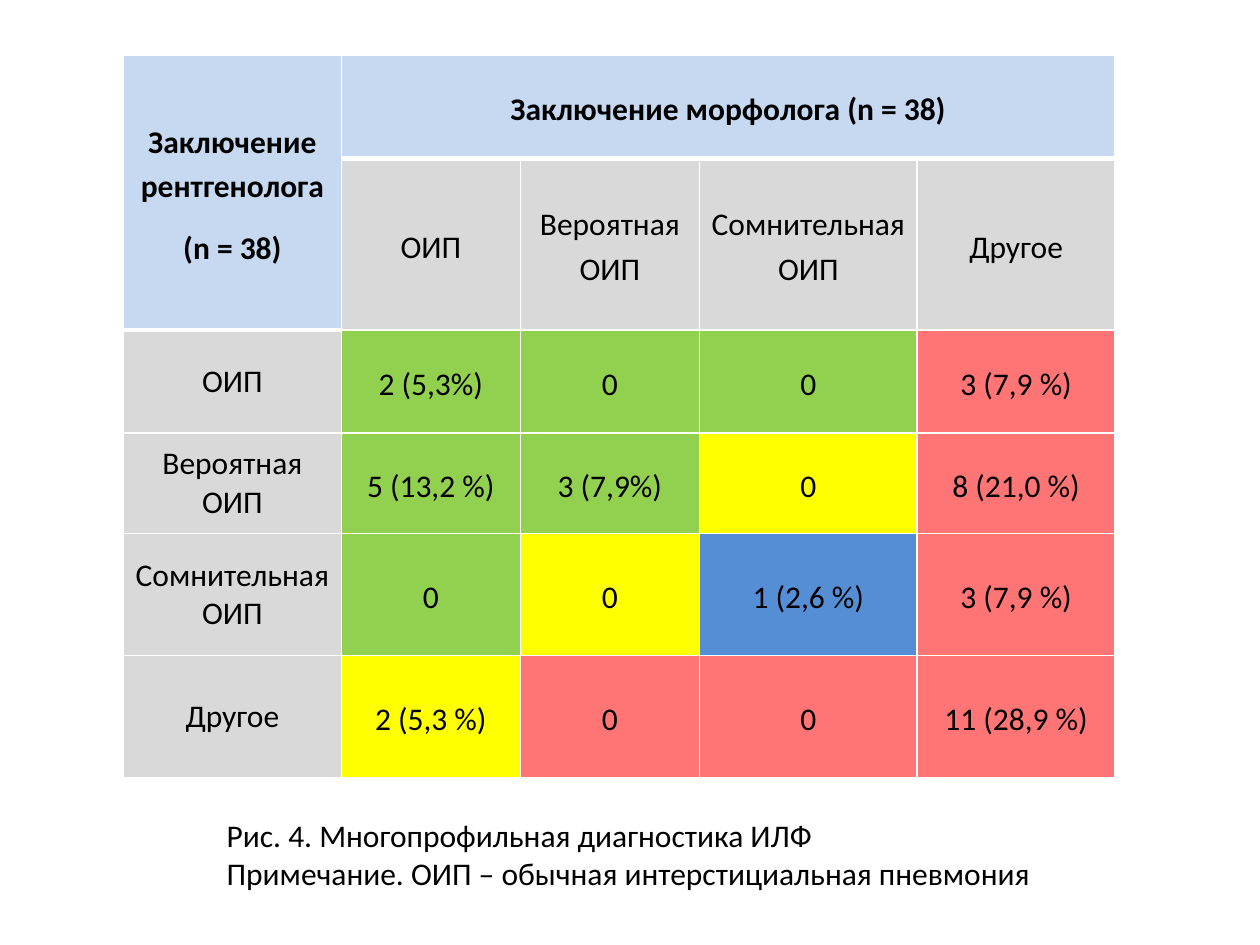
from dataclasses import dataclass

from lxml.etree import SubElement
from pptx import Presentation
from pptx.dml.color import RGBColor
from pptx.enum.text import MSO_ANCHOR as Anchor, MSO_AUTO_SIZE as AutoSize, PP_ALIGN as Align
from pptx.oxml.ns import qn
from pptx.util import Cm, Pt

WHITE, BLACK = "FFFFFF", "000000"
HEADER, LABEL = "C6D9F1", "D9D9D9"
GREEN, YELLOW, BLUE, RED = "92D050", "FFFF00", "558ED5", "FF7575"

COLUMN_WIDTHS = [4.39, 3.61, 3.61, 4.39, 3.99]
ROW_HEIGHTS = [2.08, 3.45, 2.08, 2.03, 2.46, 2.46]
DIAGNOSES = ["ОИП", "Вероятная ОИП", "Сомнительная ОИП", "Другое"]


@dataclass
class Finding:
    text: str
    fill: str


FINDINGS = [
    [Finding("2 (5,3%)", GREEN), Finding("0", GREEN), Finding("0", GREEN), Finding("3 (7,9 %)", RED)],
    [Finding("5 (13,2 %)", GREEN), Finding("3 (7,9%)", GREEN), Finding("0", YELLOW), Finding("8 (21,0 %)", RED)],
    [Finding("0", GREEN), Finding("0", YELLOW), Finding("1 (2,6 %)", BLUE), Finding("3 (7,9 %)", RED)],
    [Finding("2 (5,3 %)", YELLOW), Finding("0", RED), Finding("0", RED), Finding("11 (28,9 %)", RED)],
]


def color(hex_code: str) -> RGBColor:
    return RGBColor.from_string(hex_code)


def write(frame, *lines: str, bold=False, align=Align.LEFT, spacing=None, after=None) -> None:
    for index, line in enumerate(lines):
        paragraph = frame.paragraphs[0] if index == 0 else frame.add_paragraph()
        paragraph.alignment = align
        paragraph.line_spacing = spacing
        paragraph.space_after = None if after is None else Pt(after)
        run = paragraph.add_run()
        run.text = line
        run.font.name = "Calibri"
        run.font.size = Pt(18)
        run.font.bold = bold
        run.font.color.rgb = color(BLACK)


def fill_cell(cell, fill: str, *lines: str, bold=False, spacing=1.15, after=10) -> None:
    cell.fill.solid()
    cell.fill.fore_color.rgb = color(fill)
    cell.vertical_anchor = Anchor.MIDDLE
    cell.margin_left = cell.margin_right = Cm(0.18)
    cell.margin_top = cell.margin_bottom = 0
    write(cell.text_frame, *lines, bold=bold, align=Align.CENTER, spacing=spacing, after=after)


def add_header_borders(cell) -> None:
    """Draw white edges, the bottom one thicker; call before the cell is filled."""
    properties = cell._tc.get_or_add_tcPr()
    for side, width in (("L", 1), ("R", 1), ("T", 1), ("B", 3)):
        line = SubElement(properties, qn(f"a:ln{side}"), w=str(Pt(width)))
        solid = SubElement(line, qn("a:solidFill"))
        SubElement(solid, qn("a:srgbClr"), val=WHITE)


def add_diagnosis_table(slide) -> None:
    table = slide.shapes.add_table(
        len(ROW_HEIGHTS), len(COLUMN_WIDTHS), Cm(2.49), Cm(1.12),
        Cm(sum(COLUMN_WIDTHS)), Cm(sum(ROW_HEIGHTS)),
    ).table
    table.horz_banding = False
    for column, width in zip(table.columns, COLUMN_WIDTHS):
        column.width = Cm(width)
    for row, height in zip(table.rows, ROW_HEIGHTS):
        row.height = Cm(height)

    radiologist, morphologist = table.cell(0, 0), table.cell(0, 1)
    radiologist.merge(table.cell(1, 0))
    morphologist.merge(table.cell(0, 4))
    for header in (radiologist, morphologist):
        add_header_borders(header)
    fill_cell(radiologist, HEADER, "Заключение рентгенолога", "(n = 38)", bold=True)
    fill_cell(morphologist, HEADER, "Заключение морфолога (n = 38)", bold=True)

    for index, (diagnosis, findings) in enumerate(zip(DIAGNOSES, FINDINGS)):
        row = index + 2
        fill_cell(table.cell(1, index + 1), LABEL, diagnosis)
        fill_cell(table.cell(row, 0), LABEL, diagnosis, spacing=None, after=None)
        for column, finding in enumerate(findings, start=1):
            fill_cell(table.cell(row, column), finding.fill, finding.text)


def add_caption(slide) -> None:
    frame = slide.shapes.add_textbox(Cm(4.32), Cm(16.33), Cm(16.89), Cm(1.8)).text_frame
    frame.word_wrap = False
    frame.auto_size = AutoSize.SHAPE_TO_FIT_TEXT
    write(
        frame,
        "Рис. 4. Многопрофильная диагностика ИЛФ",
        "Примечание. ОИП – обычная интерстициальная пневмония",
    )


def main() -> None:
    presentation = Presentation()
    presentation.slide_width, presentation.slide_height = Cm(25.4), Cm(19.05)
    slide = presentation.slides.add_slide(presentation.slide_layouts[6])
    add_diagnosis_table(slide)
    add_caption(slide)
    presentation.save("out.pptx")


if __name__ == "__main__":
    main()
